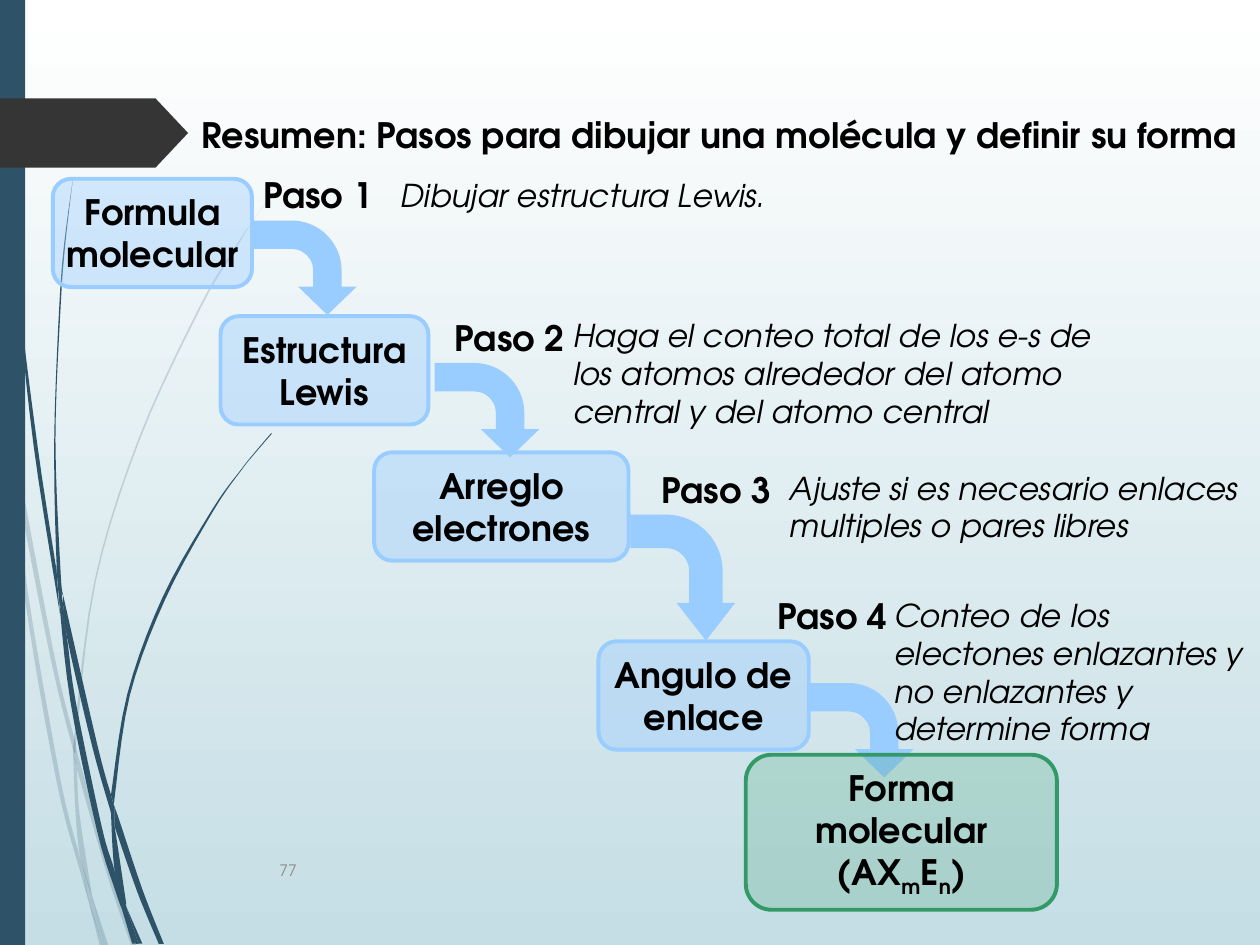
import pptx
import pptx.util
import pptx.dml.color
import pptx.enum.shapes
import pptx.enum.text
import pptx.oxml

Pt = pptx.util.Pt
RGBColor = pptx.dml.color.RGBColor
MSO_SHAPE = pptx.enum.shapes.MSO_SHAPE
PP_ALIGN = pptx.enum.text.PP_ALIGN
MSO_ANCHOR = pptx.enum.text.MSO_ANCHOR

FONT = "TeX Gyre Adventor"
WHITE = RGBColor(0xFF, 0xFF, 0xFF)
PALE_TEAL = RGBColor(0xC5, 0xDE, 0xE5)
NAVY = RGBColor(0x2E, 0x53, 0x69)
CHARCOAL = RGBColor(0x35, 0x35, 0x35)
BLACK = RGBColor(0, 0, 0)
GRAY = RGBColor(0x8C, 0x8C, 0x8C)
SKY = RGBColor(0x99, 0xCC, 0xFF)
GREEN = RGBColor(0x33, 0x99, 0x66)


def paint(shape, colour, opacity=100, outlined=False):
    shape.shadow.inherit = False
    shape.fill.solid()
    shape.fill.fore_color.rgb = colour
    if opacity < 100:
        colour_xml = shape.fill._xPr.find(".//" + pptx.oxml.ns.qn("a:srgbClr"))
        alpha = colour_xml.makeelement(pptx.oxml.ns.qn("a:alpha"), {"val": str(opacity * 1000)})
        colour_xml.append(alpha)
    if outlined:
        shape.line.color.rgb = colour
        shape.line.width = Pt(2.25)
    else:
        shape.line.fill.background()


def write(shape, text, size, align=PP_ALIGN.LEFT, bold=False, italic=False, colour=BLACK):
    frame = shape.text_frame
    frame.text = text
    frame.word_wrap = True
    for paragraph in frame.paragraphs:
        paragraph.alignment = align
        for run in paragraph.runs:
            run.font.name = FONT
            run.font.size = Pt(size)
            run.font.bold = bold
            run.font.italic = italic
            run.font.color.rgb = colour
    return frame


deck = pptx.Presentation()
deck.slide_width, deck.slide_height = Pt(720), Pt(540)
slide = deck.slides.add_slide(deck.slide_layouts[5])
shapes = slide.shapes

backdrop = slide.background.fill
backdrop.gradient()
backdrop.gradient_angle = 270
for stop, colour in zip(backdrop.gradient_stops, (WHITE, PALE_TEAL)):
    stop.color.rgb = colour

light_blades = [
    ([(5.8, 252), (4.3, 231.8), (0, 203)], [(0, 215.3), (5, 247.7), (5.8, 252)]),
    ([(7.2, 248.4), (31, 374.4), (42.5, 421.9)],
     [(42.5, 431.3), (28.8, 375.8), (8.6, 270.7), (7.2, 248.4)]),
    ([(43.9, 429.1), (46.1, 437), (63.4, 498.2), (77.8, 540)],
     [(74.9, 540), (61.2, 499.7), (43.9, 439.2)]),
    ([(52.6, 511.9), (61.9, 540)], [(59.8, 540), (52.6, 511.9)]),
    ([(5.8, 252), (8.6, 270.7), (15.8, 337.7), (34.6, 445.7), (46.1, 491.8), (50.4, 514.1)],
     [(50.4, 514.1), (46.1, 499), (32.4, 447.1), (13.7, 338.4), (5.8, 252)]),
    ([(41.8, 431.3), (43.2, 465.1), (46.1, 491.8), (52.6, 511.9)],
     [(52.6, 511.9), (45.4, 465.1), (43.9, 439.2), (41.8, 431.3)]),
    ([(43.9, 429.1), (43.9, 420.5), (54.7, 332.6), (79.9, 251.3), (114.5, 176.4),
      (134.6, 142.6), (144.7, 126), (156.2, 110.9)],
     [(156.2, 110.2), (144.7, 126), (133.9, 141.8), (113.8, 175.7), (79.2, 250.6),
      (54, 331.9), (42.5, 420.5), (43.9, 429.1)]),
    ([(50.4, 514.1), (56.9, 540)], [(59, 540), (50.4, 514.1)]),
    ([(43.9, 439.2), (43.9, 429.1), (42.5, 421.9)], [(41.8, 431.3), (43.9, 437.8)]),
    ([(46.8, 491.8), (50.4, 514.1), (59, 540)],
     [(59.8, 540), (52.6, 511.9), (48.2, 498.2), (46.8, 491.8)]),
]
dark_blades = [
    ([(1.4, 0), (2.2, 34.6), (3.6, 79.2), (10.1, 167.8), (19.4, 255.6), (33.1, 343.4), (33.8, 346.3)],
     [(32.4, 326.2), (21.6, 255.6), (10.8, 167), (4.3, 78.5), (2.9, 34.6), (2.2, 0)]),
    ([(36, 339.8), (55.4, 424.8), (63.4, 454.3)],
     [(63.4, 464.4), (52.6, 426.2), (38.2, 363.6), (36, 339.8)]),
    ([(65.5, 461.5), (67.7, 467.3), (81.4, 508.3), (93.6, 539.3)],
     [(90.7, 539.3), (78.5, 509.8), (65.5, 472.3)]),
    ([(33.8, 343.4), (38.2, 363.6), (43.2, 400.3), (58.3, 473), (65.5, 497.5), (69.8, 519.8)],
     [(69.8, 519.8), (66.2, 509.8), (55.4, 474.5), (40.3, 401), (33.8, 343.4)]),
    ([(36, 339.8), (34.6, 326.2), (31.7, 251.3), (34.6, 176.4), (37.4, 139), (41.8, 101.5)],
     [(41.8, 101.5), (36.7, 139), (33.8, 176.4), (31, 251.3), (32.4, 323.3), (35.3, 339.8)]),
    ([(72, 517.7), (79.2, 539.3)], [(81.4, 539.3), (72, 517.7)]),
    ([(32.4, 323.3), (35.3, 339.8), (38.2, 363.6)], [(33.8, 343.4), (32.4, 326.2)]),
    ([(65.5, 461.5), (65.5, 455.8), (74.2, 397.4), (94.3, 342.7), (121.7, 292.3),
      (137.5, 269.3), (146.2, 258.5), (155.5, 247.7)],
     [(154.8, 247.7), (146.2, 257.8), (137.5, 268.6), (121, 291.6), (92.9, 341.3),
      (72.7, 396.7), (63.4, 454.3)]),
    ([(69.8, 519.8), (75.6, 539.3)], [(77.8, 539.3), (69.8, 519.8)]),
    ([(63.4, 464.4), (65.5, 497.5), (72, 517.7)], [(72, 515.5), (65.5, 472.3), (63.4, 464.4)]),
    ([(63.4, 464.4), (65.5, 472.3)], [(65.5, 461.5), (63.4, 454.3)]),
    ([(65.5, 497.5), (69.8, 519.8), (77.8, 539.3)], [(79.2, 539.3), (72, 517.7), (65.5, 497.5)]),
]
for blades, opacity in ((light_blades, 20), (dark_blades, 100)):
    for edges in blades:
        outline = []
        for edge in edges:
            padded = [edge[0], *edge, edge[-1]]
            for a, b, c, d in zip(padded, padded[1:], padded[2:], padded[3:]):
                for t in (0, 0.2, 0.4, 0.6, 0.8):
                    outline.append(tuple(Pt(
                        q + t * (r - p) / 2 + t * t * (p - 2.5 * q + 2 * r - s / 2)
                        + t ** 3 * (1.5 * (q - r) + (s - p) / 2))
                        for p, q, r, s in zip(a, b, c, d)))
            outline.append(tuple(Pt(value) for value in edge[-1]))
        builder = shapes.build_freeform(*outline[0])
        builder.add_line_segments(outline[1:], close=True)
        paint(builder.convert_to_shape(), NAVY, opacity)

side_band = shapes.add_shape(MSO_SHAPE.RECTANGLE, Pt(0), Pt(0), Pt(14.4), Pt(540))
paint(side_band, NAVY)
title_marker = shapes.add_shape(MSO_SHAPE.PENTAGON, Pt(0), Pt(56.2), Pt(107.5), Pt(39.6))
title_marker.adjustments[0] = 0.47
paint(title_marker, CHARCOAL)

page_number = shapes.add_textbox(Pt(152.6), Pt(483), Pt(450), Pt(28.8))
write(page_number, "77", 9, colour=GRAY).vertical_anchor = MSO_ANCHOR.MIDDLE

title = shapes.title
title.left, title.top, title.width, title.height = Pt(105.8), Pt(61.2), Pt(610.6), Pt(31.7)
heading = write(title, "Resumen: Pasos para dibujar una molécula y definir su forma",
                20, PP_ALIGN.CENTER, bold=True)
heading.vertical_anchor = MSO_ANCHOR.TOP
heading.auto_size = pptx.enum.text.MSO_AUTO_SIZE.NONE

short_bend = (0.3, 0.31, 0.3, 0.53)
long_bend = (0.32, 0.28, 0.36, 0.54)
for left, top, length, bend in [
    (146.9, 123.1, 54, short_bend),
    (251.3, 204.5, 54, short_bend),
    (354.2, 300.2, 72, long_bend),
    (465.1, 387.4, 54, short_bend),
]:
    arrow = shapes.add_shape(MSO_SHAPE.BENT_ARROW, Pt(left), Pt(top), Pt(length), Pt(59.8))
    arrow.rotation = 90
    for index, value in enumerate(bend):
        arrow.adjustments[index] = value
    paint(arrow, SKY)

for text, left, top, width, height, colour, opacity in [
    ("Formula molecular", 30.2, 102.2, 113.8, 61.9, SKY, 40),
    ("Estructura\nLewis", 126, 180.7, 118.8, 61.9, SKY, 40),
    ("Arreglo electrones", 213.8, 258.5, 145.4, 61.9, SKY, 40),
    ("Angulo de\nenlace", 342, 366.5, 120.2, 61.9, SKY, 40),
    ("Forma molecular\n(AX", 426.2, 431.3, 177.8, 88.6, GREEN, 20),
]:
    stage = shapes.add_shape(MSO_SHAPE.ROUNDED_RECTANGLE, Pt(left), Pt(top), Pt(width), Pt(height))
    paint(stage, colour, opacity, outlined=True)
    label = write(stage, text, 20, PP_ALIGN.CENTER, bold=True)
    label.margin_left = label.margin_right = label.margin_top = label.margin_bottom = Pt(3.6)

formula = label.paragraphs[1]
for part, baseline in (("m", -25000), ("E", 0), ("n", -25000), (")", 0)):
    run = formula.add_run()
    run.text = part
    run.font.name, run.font.size, run.font.bold = FONT, Pt(20), True
    run.font.color.rgb = BLACK
    run.font._element.set("baseline", str(baseline))

for number, (step_left, step_top, left, top, width, height, text) in enumerate([
    (141.8, 95.8, 221.8, 97.2, 239.8, 28.8, "Dibujar estructura Lewis."),
    (251.3, 177.1, 320.4, 177.1, 329, 72.7,
     "Haga el conteo total de los e-s de los atomos alrededor del atomo central y del atomo central"),
    (369.4, 264.2, 444.2, 264.2, 272.9, 51.1,
     "Ajuste si es necesario enlaces multiples o pares libres"),
    (435.6, 336.2, 504, 337, 216, 94.3,
     "Conteo de los electones enlazantes y no enlazantes y determine forma"),
], 1):
    step = shapes.add_textbox(Pt(step_left), Pt(step_top), Pt(79.9), Pt(31.7))
    write(step, f"Paso {number}", 20, PP_ALIGN.CENTER, bold=True).word_wrap = False
    instruction = shapes.add_textbox(Pt(left), Pt(top), Pt(width), Pt(height))
    write(instruction, text, 18, italic=True)

deck.save("out.pptx")
